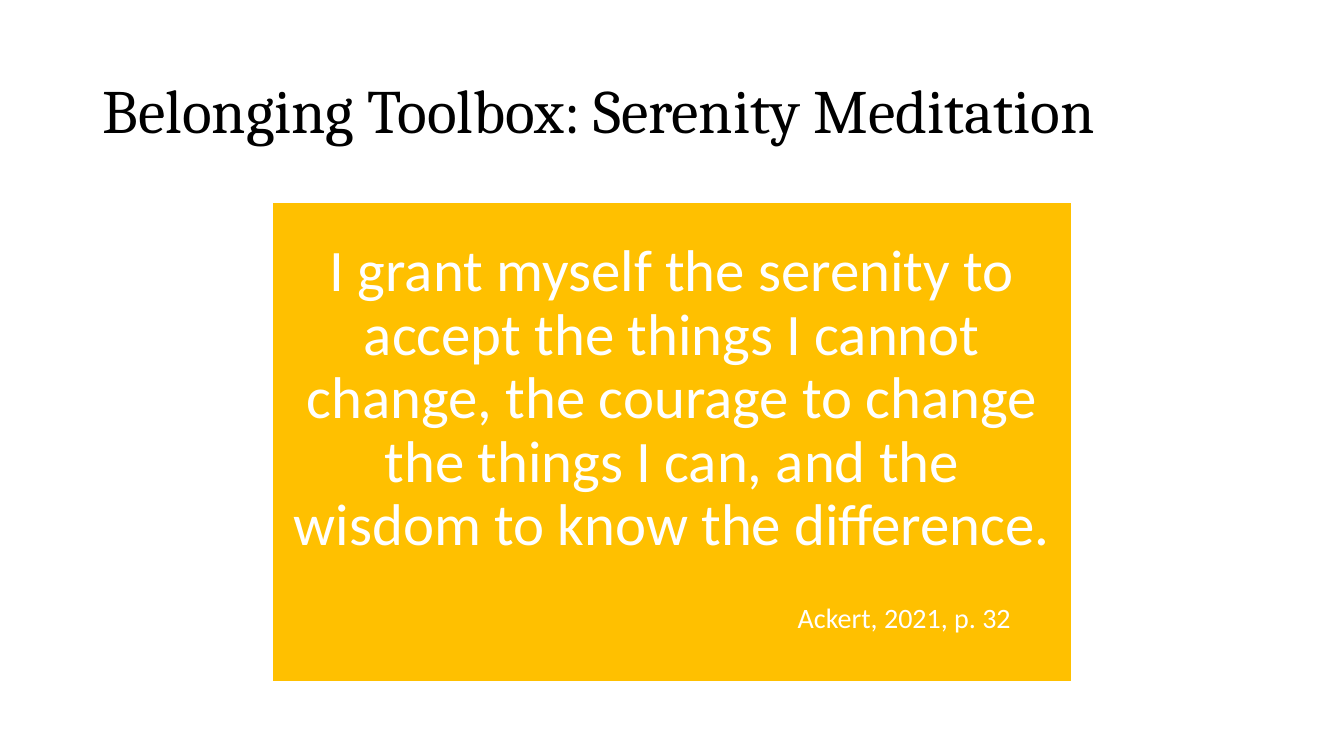
from pptx import Presentation
from pptx import util as u
from pptx.dml.color import RGBColor
from pptx.enum import shapes, text

THEME = {
    "gold": RGBColor(0xFF, 0xC0, 0x00),
    "white": RGBColor(0xFF, 0xFF, 0xFF),
    "black": RGBColor(0, 0, 0),
    "heading_font": "Cambria",
    "body_font": "Calibri",
    "title_size": 44,
    "quote_size": 42,
    "citation_size": 20,
}

presentation = Presentation()
presentation.slide_width = u.Inches(13.33)
presentation.slide_height = u.Inches(7.5)
width, height = presentation.slide_width, presentation.slide_height
slide = presentation.slides.add_slide(presentation.slide_layouts[6])


def write(paragraph, words, *, font, size, color, align, space_before=0, indent=0):
    """Fill one paragraph; indent is the left margin in inches."""
    paragraph.alignment = align
    paragraph.line_spacing = 0.9
    paragraph.space_before = u.Pt(space_before)
    if indent:
        properties = paragraph._p.get_or_add_pPr()
        properties.set("marL", str(u.Inches(indent)))
        properties.set("indent", "0")
    run = paragraph.add_run()
    run.text = words
    run.font.name = font
    run.font.size = u.Pt(size)
    run.font.color.rgb = color


# Title
title = slide.shapes.add_textbox(
    int(width * 0.069), int(height * 0.053), int(width * 0.863), int(height * 0.193))
title.text_frame.word_wrap = True
title.text_frame.vertical_anchor = text.MSO_ANCHOR.MIDDLE
write(title.text_frame.paragraphs[0], "Belonging Toolbox: Serenity Meditation",
      font=THEME["heading_font"], size=THEME["title_size"],
      color=THEME["black"], align=text.PP_ALIGN.LEFT)

# Meditation card, centred across the slide
card_width = int(width * 0.595)
card = slide.shapes.add_shape(
    shapes.MSO_SHAPE.RECTANGLE,
    (width - card_width) // 2, int(height * 0.267), card_width, int(height * 0.635))
card.shadow.inherit = False
card.fill.solid()
card.fill.fore_color.rgb = THEME["gold"]
card.line.color.rgb = THEME["white"]
card.line.width = u.Pt(1)

frame = card.text_frame
frame.word_wrap = True
frame.vertical_anchor = text.MSO_ANCHOR.MIDDLE
frame.margin_left = frame.margin_right = frame.margin_top = u.Inches(0.17)
frame.margin_bottom = u.Inches(0.25)

# Meditation and its citation
card_text = {"font": THEME["body_font"], "color": THEME["white"],
             "align": text.PP_ALIGN.CENTER}
write(frame.paragraphs[0],
      "I grant myself the serenity to accept the things I cannot change, "
      "the courage to change the things I can, and the wisdom to know the difference.",
      size=THEME["quote_size"], **card_text)
write(frame.add_paragraph(), "Ackert, 2021, p. 32",
      size=THEME["citation_size"], space_before=33, indent=4.61, **card_text)

presentation.save("out.pptx")
